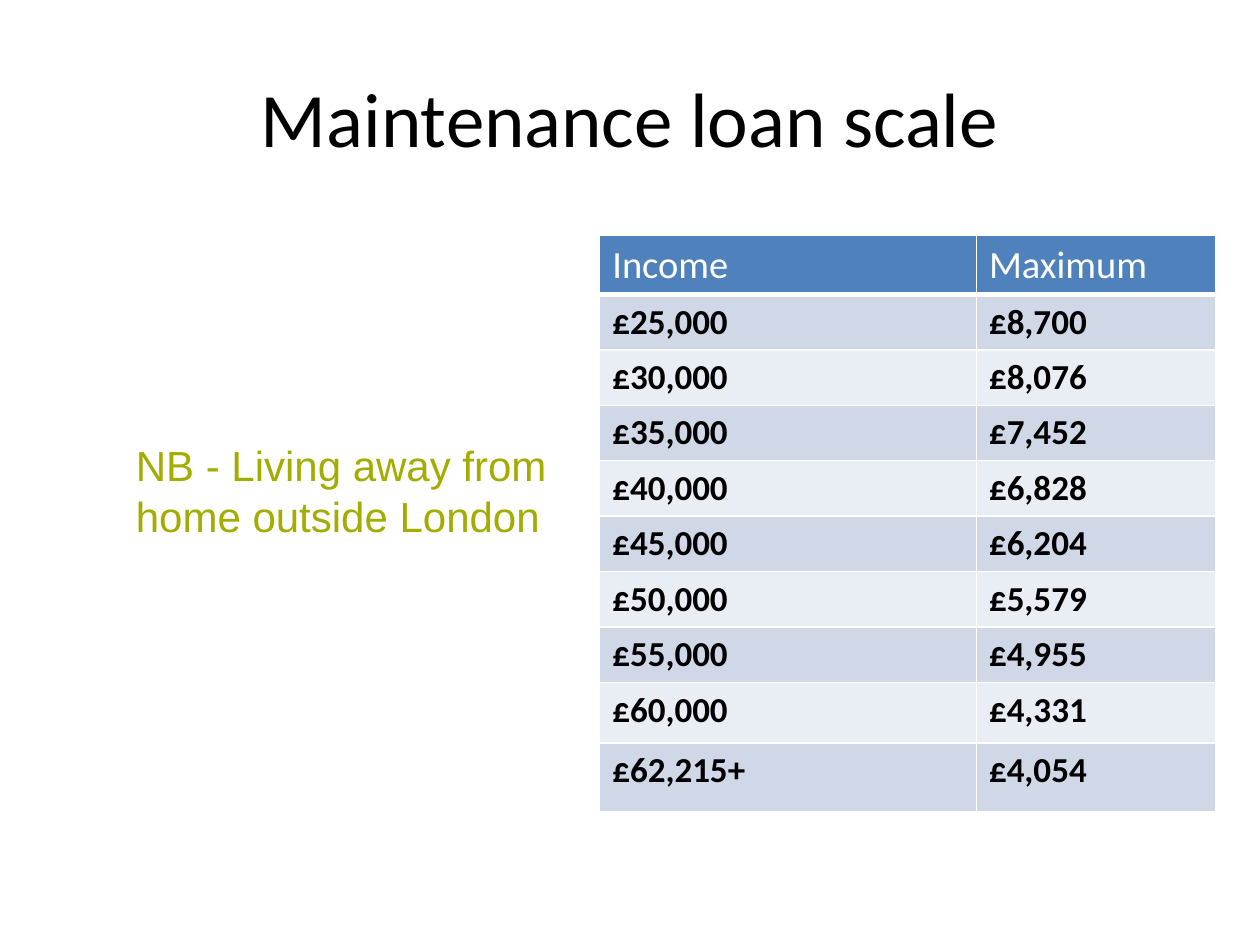
from typing import NamedTuple

from lxml import etree
from pptx import Presentation
from pptx.dml.color import RGBColor
from pptx.enum import text
from pptx.oxml import ns
from pptx.util import Inches, Pt

COLORS = {
    "black": "000000",
    "white": "FFFFFF",
    "note": "A2AD00",
    "header": "4F81BD",
    "odd_band": "D0D8E8",
    "even_band": "E9EDF4",
}

FORMATS = {
    "title": {"name": "Calibri", "size": Pt(44)},
    "note": {"name": "Arial", "size": Pt(24)},
    "header": {"name": "Calibri", "size": Pt(22), "bold": False},
    "body": {"name": "Calibri", "size": Pt(20), "bold": True},
}


class LoanBand(NamedTuple):
    income: str
    maximum: str


HEADINGS = LoanBand("Income", "Maximum")
LOAN_BANDS = [
    LoanBand("£25,000", "£8,700"),
    LoanBand("£30,000", "£8,076"),
    LoanBand("£35,000", "£7,452"),
    LoanBand("£40,000", "£6,828"),
    LoanBand("£45,000", "£6,204"),
    LoanBand("£50,000", "£5,579"),
    LoanBand("£55,000", "£4,955"),
    LoanBand("£60,000", "£4,331"),
    LoanBand("£62,215+", "£4,054"),
]
COLUMN_WIDTHS = [2.99, 1.9]
ROW_HEIGHTS = [0.43] + [0.44] * 7 + [0.48, 0.55]


def write_text(frame, content: str, style: str, color: str) -> None:
    """Put one formatted paragraph into a text frame."""
    paragraph = frame.paragraphs[0]
    run = paragraph.add_run()
    run.text = content
    for attribute, value in FORMATS[style].items():
        setattr(run.font, attribute, value)
    run.font.color.rgb = RGBColor.from_string(COLORS[color])


def place(shape, left: float, top: float, width: float, height: float) -> None:
    shape.left, shape.top = Inches(left), Inches(top)
    shape.width, shape.height = Inches(width), Inches(height)


def add_borders(cell, bottom_width: float) -> None:
    """Draw white lines round a cell; call before setting its fill."""
    properties = cell._tc.get_or_add_tcPr()
    widths = {"lnL": 1, "lnR": 1, "lnT": 1, "lnB": bottom_width}
    for side, width in widths.items():
        line = etree.SubElement(properties, ns.qn(f"a:{side}"), w=str(Pt(width)))
        fill = etree.SubElement(line, ns.qn("a:solidFill"))
        etree.SubElement(fill, ns.qn("a:srgbClr"), val=COLORS["white"])


def fill_row(table, index: int, band: LoanBand) -> None:
    is_header = index == 0
    style = "header" if is_header else "body"
    fill = "header" if is_header else ("odd_band" if index % 2 else "even_band")
    for column, content in enumerate(band):
        cell = table.cell(index, column)
        add_borders(cell, 3 if is_header else 1)
        cell.fill.solid()
        cell.fill.fore_color.rgb = RGBColor.from_string(COLORS[fill])
        write_text(cell.text_frame, content, style, "white" if is_header else "black")


def add_loan_table(slide) -> None:
    rows = [HEADINGS, *LOAN_BANDS]
    table = slide.shapes.add_table(
        len(rows), len(COLUMN_WIDTHS), Inches(4.76), Inches(1.87),
        Inches(sum(COLUMN_WIDTHS)), Inches(sum(ROW_HEIGHTS)),
    ).table
    for column, width in zip(table.columns, COLUMN_WIDTHS):
        column.width = Inches(width)
    for row, height in zip(table.rows, ROW_HEIGHTS):
        row.height = Inches(height)
    for index, band in enumerate(rows):
        fill_row(table, index, band)


def main() -> None:
    presentation = Presentation()
    presentation.slide_width, presentation.slide_height = Inches(10), Inches(7.5)
    slide = presentation.slides.add_slide(presentation.slide_layouts[5])

    # Title
    title = slide.shapes.title
    place(title, 0.5, 0.3, 9, 1.25)
    title.text_frame.vertical_anchor = text.MSO_ANCHOR.MIDDLE
    write_text(title.text_frame, "Maintenance loan scale", "title", "black")
    title.text_frame.paragraphs[0].alignment = text.PP_ALIGN.CENTER

    # Side note
    note = slide.shapes.add_textbox(
        Inches(0.98), Inches(3.44), Inches(3.46), Inches(0.91)
    )
    note.text_frame.word_wrap = True
    note.text_frame.auto_size = text.MSO_AUTO_SIZE.SHAPE_TO_FIT_TEXT
    write_text(
        note.text_frame, "NB - Living away from home outside London", "note", "note"
    )

    # Loan scale
    add_loan_table(slide)

    presentation.save("out.pptx")


if __name__ == "__main__":
    main()
